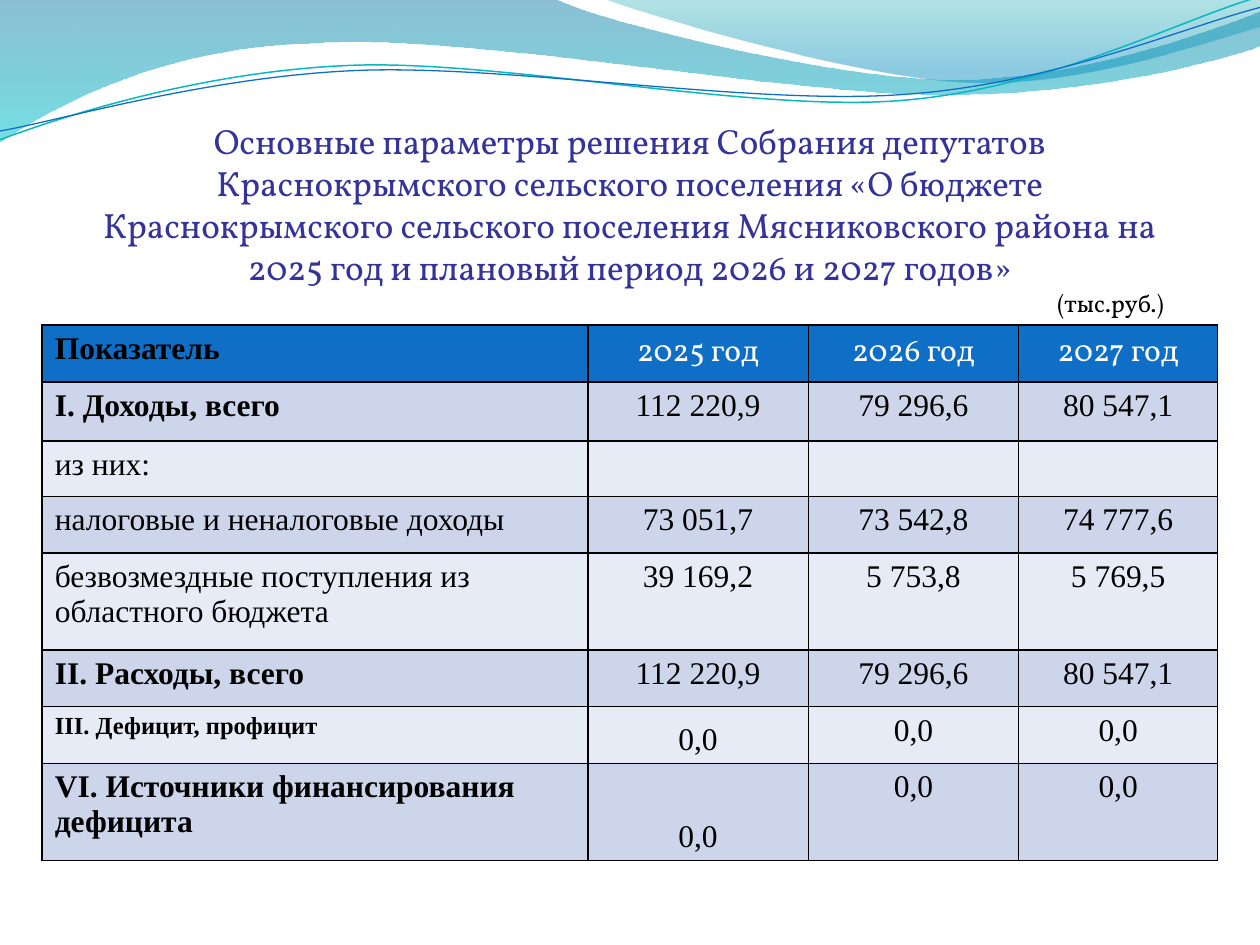
from dataclasses import dataclass
from math import cos, radians, sin

from pptx import Presentation
from pptx.dml.color import RGBColor as RGB
from pptx.enum.text import MSO_ANCHOR as ANCHOR, MSO_AUTO_SIZE as AUTO, PP_ALIGN as ALIGN
from pptx.oxml import parse_xml
from pptx.oxml.ns import nsdecls
from pptx.util import Inches, Pt


@dataclass(frozen=True)
class Theme:
    """Colours, fonts and type sizes of the slide."""
    black: str = "000000"
    white: str = "FFFFFF"
    title: str = "333399"
    blue: str = "0F6FC6"
    teal: str = "0AB8BF"
    bands: tuple = ("CCD5EA", "E7EBF5")
    wide_wave: tuple = (("0074A1", 45, 0), ("00C6CF", 55, 1))
    right_wave: tuple = (("00A1A9", 30, 0), ("008BBF", 45, 0.8))
    display: str = "Vollkorn"
    serif: str = "Times New Roman"
    title_size: int = 20
    body_size: int = 18
    small_size: int = 14


T = Theme()

WIDE_WAVE = [
    (0, 0), (4.4, -0.01), (4.76, 0.17, 6.64, 0.63, 7.58, 0.63),
    (8.53, 0.63, 9.58, 0.26, 10, 0.09), (10.01, 0.36),
    (9.83, 0.44, 8.7, 0.76, 7.46, 0.75), (6.22, 0.75, 3.82, 0.28, 2.57, 0.34),
    (1.29, 0.36, 0.46, 0.83, -0.01, 1.13), (0, 0),
]
RIGHT_WAVE = [
    (4.79, -0.01), (5.09, 0.11, 6.82, 0.62, 7.69, 0.65),
    (8.56, 0.69, 9.61, 0.32, 10, 0.21), (10, 0), (4.79, -0.01),
]
TEAL_LINE = [
    (0, 1.11), (0.48, 0.93, 1.58, 0.57, 2.77, 0.52),
    (3.95, 0.47, 5.93, 0.89, 7.13, 0.8), (8.33, 0.71, 9.38, 0.15, 9.98, -0.02),
]
BLUE_LINE = [
    (0, 1.04), (0.47, 0.96, 1.64, 0.61, 2.83, 0.56),
    (4.03, 0.51, 5.97, 0.84, 7.17, 0.75), (8.36, 0.67, 9.41, 0.21, 10, 0.06),
]
TILT = -2.7

TITLE = ("Основные параметры решения Собрания депутатов Краснокрымского сельского "
         "поселения «О бюджете Краснокрымского сельского поселения Мясниковского "
         "района на 2025 год и плановый период 2026 и 2027 годов»")
UNIT = "(тыс.руб.)"
COLS = [4.33, 1.75, 1.67, 1.58]
HEIGHTS = [0.45, 0.47, 0.44, 0.45, 0.77, 0.45, 0.45, 0.77]
ROWS = [
    ("Показатель", "2025 год", "2026 год", "2027 год"),
    ("I. Доходы, всего", "112 220,9", "79 296,6", "80 547,1"),
    ("из них:", "", "", ""),
    ("налоговые и неналоговые доходы", "73 051,7", "73 542,8", "74 777,6"),
    ("безвозмездные поступления из областного бюджета", "39 169,2", "5 753,8", "5 769,5"),
    ("II. Расходы, всего", "112 220,9", "79 296,6", "80 547,1"),
    ("III. Дефицит, профицит", "0,0", "0,0", "0,0"),
    ("VI. Источники финансирования дефицита", "0,0", "0,0", "0,0"),
]
BOLD_ROWS = {0, 1, 5, 6, 7}
SMALL_ROW = 6
LOW_CELLS = {(6, 1), (7, 1)}


def turn(point, center, degrees):
    """Turn a point clockwise about a center."""
    a = radians(degrees)
    dx, dy = point[0] - center[0], point[1] - center[1]
    return (center[0] + dx * cos(a) - dy * sin(a),
            center[1] + dx * sin(a) + dy * cos(a))


def add_path(shapes, box, segments, close, tilt=0):
    """Draw a freeform of lines and cubic curves from the box's corner."""
    left, top, width, height = box
    center = (left + width / 2, top + height / 2)
    points = [turn((left + Inches(seg[i]), top + Inches(seg[i + 1])), center, -tilt)
              for seg in segments for i in range(0, len(seg), 2)]
    builder = shapes.build_freeform(*points[0])
    builder.add_line_segments(points[1:], close=close)
    sp = builder.convert_to_shape()
    lines = iter(sp._element.xpath(".//a:path/a:lnTo"))
    for seg in segments[1:]:
        first = next(lines)
        if len(seg) == 6:
            curve = parse_xml(f'<a:cubicBezTo {nsdecls("a")}/>')
            first.addprevious(curve)
            for line in (first, next(lines), next(lines)):
                curve.append(line[0])
                line.getparent().remove(line)
    sp.rotation = tilt
    sp.shadow.inherit = False
    return sp


def add_wave(shapes, box, segments, stops):
    """Draw a wave with a translucent vertical gradient."""
    sp = add_path(shapes, box, segments, True)
    sp.line.fill.background()
    sp.fill.gradient()
    sp.fill.gradient_angle = 270
    for stop, (color, _, position) in zip(sp.fill.gradient_stops, stops):
        stop.color.rgb = RGB.from_string(color)
        stop.position = position
    for clr, (_, alpha, _) in zip(sp._element.xpath(".//a:gs/a:srgbClr"), stops):
        clr.append(parse_xml(f'<a:alpha {nsdecls("a")} val="{alpha * 1000}"/>'))


def add_curve(shapes, box, segments, color, width):
    """Draw an open curved line."""
    sp = add_path(shapes, box, segments, False, TILT)
    sp.fill.background()
    sp.line.color.rgb = RGB.from_string(color)
    sp.line.width = Pt(width)


def add_header(slide, box):
    """Place the waves and the grouped lines along the top."""
    add_wave(slide.shapes, box, WIDE_WAVE, T.wide_wave)
    add_wave(slide.shapes, box, RIGHT_WAVE, T.right_wave)
    lines = slide.shapes.add_group_shape().shapes
    add_curve(lines, box, TEAL_LINE, T.teal, 0.85)
    add_curve(lines, box, BLUE_LINE, T.blue, 0.75)


def write(p, text, align, name, size, color, bold=False):
    """Fill a paragraph and set its font."""
    p.text = text
    p.alignment = align
    p.font.name = name
    p.font.size = Pt(size)
    p.font.bold = bold
    p.font.color.rgb = RGB.from_string(color)


def add_title(slide, box):
    """Place the title with the unit of measure under it."""
    tf = slide.shapes.add_textbox(*box).text_frame
    tf.word_wrap = True
    tf.auto_size = AUTO.SHAPE_TO_FIT_TEXT
    write(tf.paragraphs[0], TITLE, ALIGN.CENTER, T.display, T.title_size, T.title)
    write(tf.add_paragraph(), UNIT, ALIGN.RIGHT, T.display, T.small_size, T.black)


def add_borders(cell):
    """Give a cell thin black borders on all sides."""
    tc_pr = cell._tc.get_or_add_tcPr()
    for side in "LRTB":
        tc_pr.append(parse_xml(
            f'<a:ln{side} {nsdecls("a")} w="{Pt(1)}"><a:solidFill>'
            f'<a:srgbClr val="{T.black}"/></a:solidFill></a:ln{side}>'))


def add_budget_table(slide, box):
    """Place the table of budget figures."""
    table = slide.shapes.add_table(len(ROWS), len(COLS), *box).table
    for col, width in zip(table.columns, COLS):
        col.width = Inches(width)
    for row, height in zip(table.rows, HEIGHTS):
        row.height = Inches(height)
    for i, texts in enumerate(ROWS):
        for j, text in enumerate(texts):
            cell = table.cell(i, j)
            add_borders(cell)
            cell.fill.solid()
            fill = T.bands[(i - 1) % 2] if i else T.blue
            cell.fill.fore_color.rgb = RGB.from_string(fill)
            if (i, j) in LOW_CELLS:
                cell.vertical_anchor = ANCHOR.BOTTOM
            if text:
                year = i == 0 and j > 0
                write(cell.text_frame.paragraphs[0], text,
                      ALIGN.CENTER if j else ALIGN.LEFT,
                      T.display if year else T.serif,
                      T.small_size if (i, j) == (SMALL_ROW, 0) else T.body_size,
                      T.white if year else T.black,
                      j == 0 and i in BOLD_ROWS)


def main():
    """Build and save the slide."""
    prs = Presentation()
    prs.slide_width, prs.slide_height = Inches(10), Inches(7.5)
    slide = prs.slides.add_slide(prs.slide_layouts[6])
    add_header(slide, (0, 0, prs.slide_width, Inches(1.13)))
    for add, top, width, height in ((add_title, 0.9, 8.67, 1.68),
                                    (add_budget_table, 2.58, sum(COLS), sum(HEIGHTS))):
        left = (prs.slide_width - Inches(width)) // 2
        add(slide, (left, Inches(top), Inches(width), Inches(height)))
    prs.save("out.pptx")


if __name__ == "__main__":
    main()
